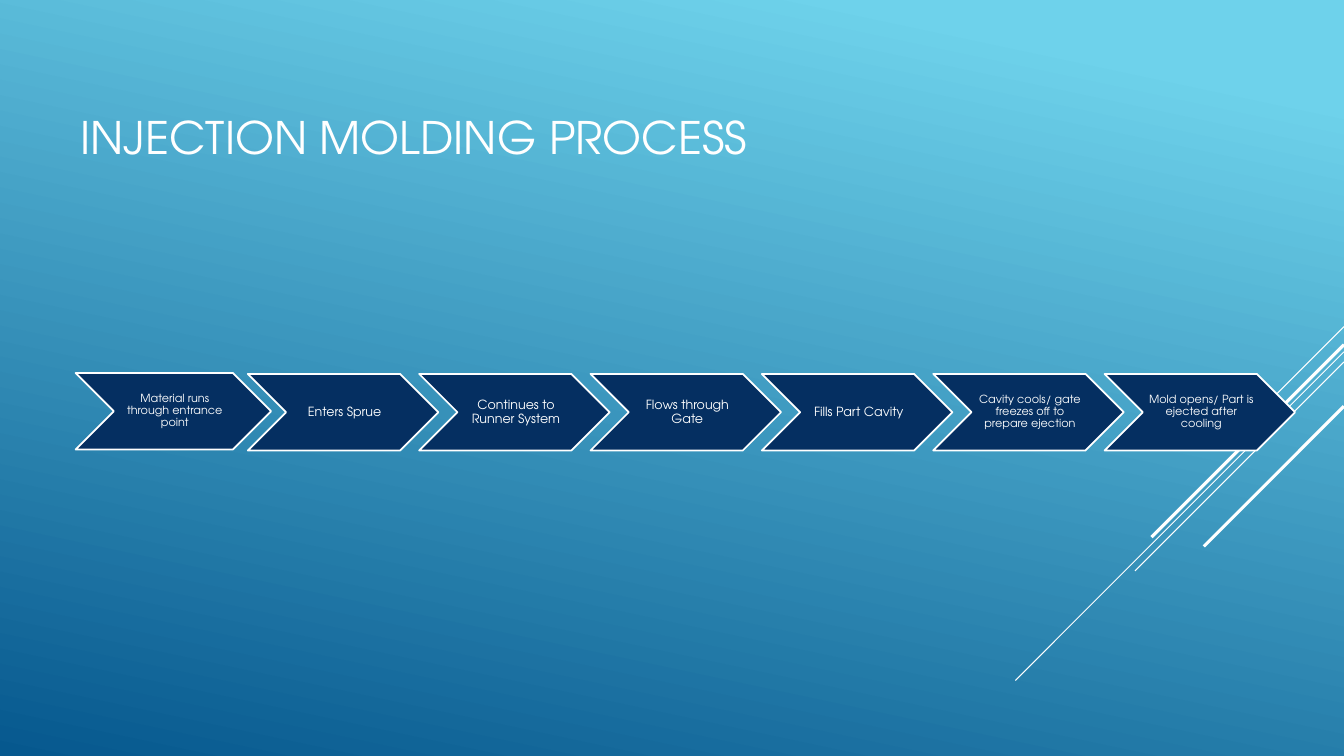
from dataclasses import dataclass

from lxml.etree import SubElement
from pptx import Presentation
from pptx.dml.color import RGBColor
from pptx.enum.shapes import MSO_CONNECTOR, MSO_SHAPE
from pptx.enum.text import MSO_ANCHOR, MSO_AUTO_SIZE, PP_ALIGN
from pptx.oxml.ns import qn
from pptx.util import Pt


@dataclass(frozen=True)
class Theme:
    font: str = "TeX Gyre Adventor"
    white: RGBColor = RGBColor(0xFF, 0xFF, 0xFF)
    navy: RGBColor = RGBColor(0x05, 0x2F, 0x61)
    sky: RGBColor = RGBColor(0x6E, 0xD2, 0xEB)
    ocean: RGBColor = RGBColor(0x06, 0x58, 0x8E)
    title_size: float = 32
    step_size: float = 9
    long_step_size: float = 8


THEME = Theme()
PAGE_WIDTH, PAGE_HEIGHT = 960, 540

# Each diagonal falls at 45 degrees from the right edge: start height, run, weight
DIAGONALS = [
    (233.3, 72, 0.75),
    (251.3, 234.7, 0.75),
    (258.5, 149.3, 0.75),
    (246.2, 137.5, 2.25),
    (290.2, 100.1, 2.25),
]

STEPS = [
    ("Material runs through entrance point", THEME.long_step_size),
    ("Enters Sprue", THEME.step_size),
    ("Continues to Runner System", THEME.step_size),
    ("Flows through Gate", THEME.step_size),
    ("Fills Part Cavity", THEME.step_size),
    ("Cavity cools/ gate freezes off to prepare ejection", THEME.long_step_size),
    ("Mold opens/ Part is ejected after cooling", THEME.long_step_size),
]
STEP_LEFT, STEP_TOP, STEP_PITCH = 54.6, 267.1, 122.4
STEP_WIDTH, STEP_HEIGHT = 136.1, 54.7


def apply_format(target, values):
    for name, value in values.items():
        setattr(target, name, value)


def write_text(box, text, size, frame_format, para_format):
    frame = box.text_frame
    apply_format(frame, {"word_wrap": True, "auto_size": MSO_AUTO_SIZE.NONE, **frame_format})
    para = frame.paragraphs[0]
    apply_format(para, para_format)
    span = para.add_run()
    span.text = text
    apply_format(span.font, {"name": THEME.font, "size": Pt(size), "bold": False})
    span.font.color.rgb = THEME.white


def paint_background(page):
    fill = page.background.fill
    fill.gradient()
    fill.gradient_angle = 258
    stops = [(0.1, THEME.sky), (1, THEME.ocean)]
    for stop, (position, color) in zip(fill.gradient_stops, stops):
        stop.position = position
        stop.color.rgb = color


def add_diagonal(page, top, run, weight):
    line = page.shapes.add_connector(
        MSO_CONNECTOR.STRAIGHT,
        Pt(PAGE_WIDTH), Pt(top), Pt(PAGE_WIDTH - run), Pt(top + run),
    )
    line.line.color.rgb = THEME.white
    line.line.width = Pt(weight)
    SubElement(line._element.spPr, qn("a:effectLst"))


def add_title(page, text):
    title = page.shapes.title
    apply_format(title, {"left": Pt(50.4), "top": Pt(74.9), "width": Pt(753), "height": Pt(85)})
    write_text(title, text, THEME.title_size,
               {"vertical_anchor": MSO_ANCHOR.TOP}, {"alignment": PP_ALIGN.LEFT})


def add_step(page, left, top, width, text, size):
    step = page.shapes.add_shape(
        MSO_SHAPE.CHEVRON, Pt(left), Pt(top), Pt(width), Pt(STEP_HEIGHT))
    step.shadow.inherit = False
    step.fill.solid()
    step.fill.fore_color.rgb = THEME.navy
    step.line.color.rgb = THEME.white
    step.line.width = Pt(1.25)
    write_text(
        step, text, size,
        {"vertical_anchor": MSO_ANCHOR.MIDDLE, "margin_left": Pt(2.9),
         "margin_top": Pt(0.7), "margin_right": Pt(0.7), "margin_bottom": Pt(0.7)},
        {"alignment": PP_ALIGN.CENTER, "line_spacing": 0.9, "space_after": Pt(3)},
    )


def main():
    deck = Presentation()
    deck.slide_width, deck.slide_height = Pt(PAGE_WIDTH), Pt(PAGE_HEIGHT)
    page = deck.slides.add_slide(deck.slide_layouts[5])

    # Backdrop
    paint_background(page)
    for top, run, weight in DIAGONALS:
        add_diagonal(page, top, run, weight)

    # Heading
    add_title(page, "INJECTION MOLDING PROCESS")

    # Process chain: the first chevron is slightly wider and higher
    for index, (text, size) in enumerate(STEPS):
        first = index == 0
        add_step(page, STEP_LEFT + index * STEP_PITCH - 0.6 * first,
                 STEP_TOP - 0.7 * first, STEP_WIDTH + 3.6 * first, text, size)

    deck.save("out.pptx")


if __name__ == "__main__":
    main()
